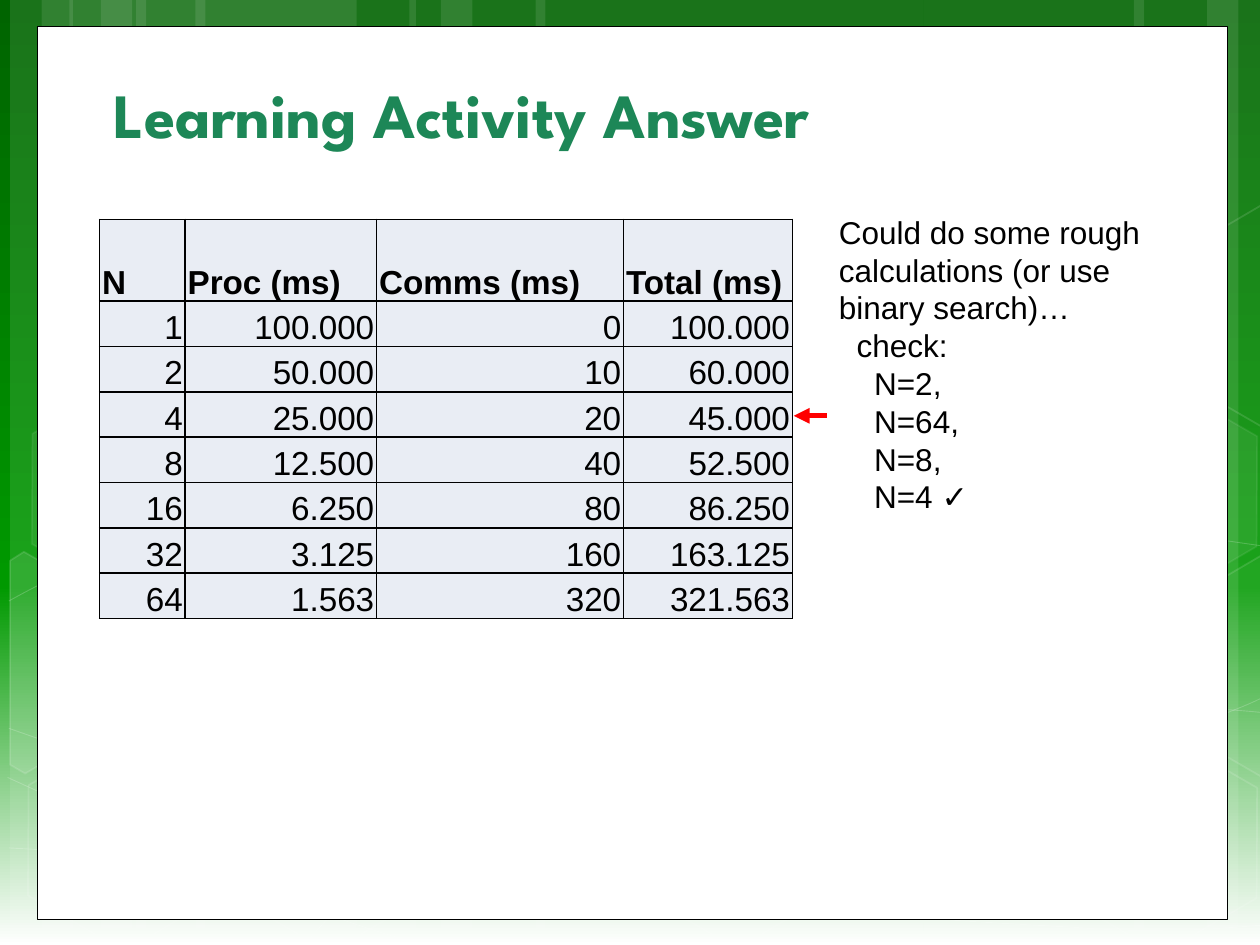
import copy

import lxml.etree
import pptx
import pptx.dml.color
import pptx.enum.shapes
import pptx.enum.text
import pptx.oxml.ns
import pptx.util

Inches = pptx.util.Inches
Pt = pptx.util.Pt
RGBColor = pptx.dml.color.RGBColor
MSO_SHAPE = pptx.enum.shapes.MSO_SHAPE
MSO_ANCHOR = pptx.enum.text.MSO_ANCHOR
PP_ALIGN = pptx.enum.text.PP_ALIGN
qn = pptx.oxml.ns.qn

DARK_GREEN = RGBColor(0x00, 0x64, 0x00)
GREEN = RGBColor(0x00, 0x99, 0x00)
TITLE_GREEN = RGBColor(0x1D, 0x87, 0x57)
WHITE = RGBColor(0xFF, 0xFF, 0xFF)
BLACK = RGBColor(0x00, 0x00, 0x00)
RED = RGBColor(0xFF, 0x00, 0x00)
CELL_FILL = RGBColor(0xE9, 0xED, 0xF4)


def style_translucent(shape, fill_percent, line_percent, line_width=1):
    """Make the shape white at the given opacities; 0 leaves that part out."""
    shape.shadow.inherit = False
    for fill, percent in ((shape.fill, fill_percent), (shape.line.fill, line_percent)):
        if percent:
            fill.solid()
            fill.fore_color.rgb = WHITE
        else:
            fill.background()
    if line_percent:
        shape.line.width = Pt(line_width)
    percents = [p for p in (fill_percent, line_percent) if p]
    colors = shape._element.spPr.iter(qn("a:srgbClr"))
    for color, percent in zip(colors, percents):
        lxml.etree.SubElement(color, qn("a:alpha")).set("val", str(percent * 1000))


def add_outline(points, close):
    """Draw a freeform through points given in inches."""
    corners = [(Inches(x), Inches(y)) for x, y in points]
    builder = slide.shapes.build_freeform(*corners[0])
    builder.add_line_segments(corners[1:], close=close)
    return builder.convert_to_shape()


prs = pptx.Presentation()
prs.slide_width, prs.slide_height = Inches(10), Inches(7.5)
slide = prs.slides.add_slide(prs.slide_layouts[5])

# Background gradient, top to bottom
background = slide.background.fill
background.gradient()
background.gradient_angle = 270
stop_list = background.gradient_stops[0]._gs.getparent()
stop_list.append(copy.deepcopy(stop_list[-1]))
for stop, position, color in zip(background.gradient_stops, (0, 0.62, 1), (DARK_GREEN, GREEN, WHITE)):
    stop.position = position
    stop.color.rgb = color

# Vertical bands: left, width
BANDS = [
    (1.08, 1.75), (0.08, 0.5), (0.33, 0.83), (1.55, 1.75), (0.55, 0.5), (0.8, 0.83),
    (7.33, 1.75), (9.58, 0.5), (9, 0.83), (4.25, 3.08), (3.25, 0.5), (3.5, 0.83),
]
for left, width in BANDS:
    band = slide.shapes.add_shape(MSO_SHAPE.RECTANGLE, Inches(left), 0, Inches(width), Inches(7.5))
    style_translucent(band, 10, 0)

# Thin curves: a start point, then two control points and an end point per bend
CURVES = [
    [(0.07, 6.73), (0.61, 6.76), (1.15, 6.79), (1.9, 6.78), (2.65, 6.77), (3.58, 6.75), (4.58, 6.65),
     (5.58, 6.55), (7, 6.36), (7.92, 6.17), (8.83, 5.98), (9.77, 5.68), (10.07, 5.51)],
    [(0.07, 4.77), (0.36, 4.61), (0.65, 4.46), (1.21, 4.31), (1.78, 4.16), (2.59, 3.94), (3.47, 3.87),
     (4.36, 3.8), (5.44, 3.79), (6.54, 3.87), (7.64, 3.95), (9.47, 4.26), (10.07, 4.34)],
    [(0.06, 6.17), (1.27, 6.72), (2.47, 7.27), (3.34, 7.49)],
    [(0.07, 5.78), (0.38, 5.89), (0.7, 6), (1.28, 6.16), (1.86, 6.31), (2.73, 6.56), (3.57, 6.73),
     (4.4, 6.9), (5.45, 7.08), (6.28, 7.18), (7.11, 7.29), (8, 7.33), (8.53, 7.36),
     (9.05, 7.4), (9.19, 7.38), (9.45, 7.38), (9.71, 7.37), (9.89, 7.35), (10.07, 7.34)],
    [(2.42, 7.49), (2.6, 7.29), (2.78, 7.09), (3.02, 6.91), (3.26, 6.73), (3.6, 6.53), (3.88, 6.39),
     (4.16, 6.25), (4.33, 6.19), (4.7, 6.09), (5.06, 5.99), (5.73, 5.85), (6.08, 5.78),
     (6.44, 5.71), (6.49, 5.71), (6.8, 5.69), (7.11, 5.66), (7.6, 5.63), (7.94, 5.62),
     (8.29, 5.61), (8.86, 5.62), (8.86, 5.62), (9.08, 5.62), (9.31, 5.62), (9.53, 5.62),
     (9.71, 5.63), (9.88, 5.64), (10.06, 5.66)],
]
for knots in CURVES:
    curve = add_outline(knots, close=False)
    # Merge every three straight segments into one cubic bend
    segments = list(curve._element.spPr.iter(qn("a:lnTo")))
    for first, second, third in zip(*[iter(segments)] * 3):
        first.tag = qn("a:cubicBezTo")
        for segment in (second, third):
            first.append(segment[0])
            segment.getparent().remove(segment)
    style_translucent(curve, 0, 20, 0.5)

# Hexagons: left, top, fill opacity, line opacity
HEXAGONS = [
    (4.97, 5.89, 6, 12), (0.11, 5.91, 0, 12), (0.14, 3.12, 7, 8),
    (1.74, 5.92, 0, 12), (8.34, 5.93, 0, 12), (8.34, 3.14, 7, 8),
]
for left, top, fill_percent, line_percent in HEXAGONS:
    hexagon = slide.shapes.add_shape(MSO_SHAPE.HEXAGON, Inches(left), Inches(top), Inches(1.75), Inches(1.52))
    hexagon.adjustments[0] = 0.285
    hexagon.rotation = 30
    style_translucent(hexagon, fill_percent, line_percent)

# Hexagons cut off by the slide edge: points, fill opacity
CUT_HEXAGONS = [
    ([(0.08, 4.45), (0.19, 4.38), (0.96, 4.82), (0.95, 5.7), (0.2, 6.14), (0.08, 6.07)], 10),
    ([(9.26, 4.85), (10.01, 4.41), (10.09, 4.46), (10.09, 6.13), (10.02, 6.17), (9.26, 5.73)], 4),
    ([(9.26, 2.07), (10.01, 1.63), (10.1, 1.68), (10.09, 3.35), (10.02, 3.39), (9.26, 2.95)], 0),
]
for points, fill_percent in CUT_HEXAGONS:
    style_translucent(add_outline(points, close=True), fill_percent, 12)

# White content panel
panel = slide.shapes.add_shape(MSO_SHAPE.RECTANGLE, Inches(0.3), Inches(0.21), Inches(9.44), Inches(7.09))
panel.shadow.inherit = False
panel.fill.solid()
panel.fill.fore_color.rgb = WHITE
panel.line.color.rgb = BLACK
panel.line.width = Pt(0.5)

# Title, brought in front of the panel
title = slide.shapes.title
panel._element.addnext(title._element)
title.left, title.top, title.width, title.height = Inches(0.8), Inches(0.49), Inches(8.42), Inches(0.76)
title.text_frame.text = "Learning Activity Answer"
title.text_frame.vertical_anchor = MSO_ANCHOR.BOTTOM
heading = title.text_frame.paragraphs[0]
heading.alignment = PP_ALIGN.LEFT
heading.font.name = "League Spartan"
heading.font.size = Pt(36)
heading.font.bold = True
heading.font.color.rgb = TITLE_GREEN

# Timing table
TIMINGS = [
    ("N", "Proc (ms)", "Comms (ms)", "Total (ms)"),
    ("1", "100.000", "0", "100.000"),
    ("2", "50.000", "10", "60.000"),
    ("4", "25.000", "20", "45.000"),
    ("8", "12.500", "40", "52.500"),
    ("16", "6.250", "80", "86.250"),
    ("32", "3.125", "160", "163.125"),
    ("64", "1.563", "320", "321.563"),
]
timings = slide.shapes.add_table(8, 4, Inches(0.79), Inches(1.74), Inches(5.5), Inches(3.17)).table
timings.first_row = timings.horz_banding = False
for column, width in zip(timings.columns, (0.68, 1.52, 1.96, 1.34)):
    column.width = Inches(width)
for r, values in enumerate(TIMINGS):
    timings.rows[r].height = Inches(0.36 if r else 0.65)
    for c, value in enumerate(values):
        cell = timings.cell(r, c)
        cell.text = value
        cell.vertical_anchor = MSO_ANCHOR.BOTTOM
        cell.margin_left = cell.margin_right = cell.margin_top = Inches(0.02)
        cell.margin_bottom = 0
        entry = cell.text_frame.paragraphs[0]
        entry.alignment = PP_ALIGN.RIGHT if r else PP_ALIGN.LEFT
        entry.font.name = "Arial"
        entry.font.size = Pt(19)
        entry.font.bold = r == 0
        entry.font.color.rgb = BLACK
        properties = cell._tc.get_or_add_tcPr()
        for side in ("a:lnL", "a:lnR", "a:lnT", "a:lnB"):
            border = lxml.etree.SubElement(properties, qn(side), w=str(Pt(1)))
            border_fill = lxml.etree.SubElement(border, qn("a:solidFill"))
            lxml.etree.SubElement(border_fill, qn("a:srgbClr"), val=str(BLACK))
        cell.fill.solid()
        cell.fill.fore_color.rgb = CELL_FILL

# Search steps beside the table: text, indent level
SEARCH_STEPS = [
    ("Could do some rough calculations (or use binary search)…", 0),
    ("check:", 1), ("N=2,", 2), ("N=64,", 2), ("N=8,", 2), ("N=4 ✓", 2),
]
search = slide.shapes.add_textbox(Inches(6.56), Inches(1.64), Inches(2.66), Inches(2.52)).text_frame
search.word_wrap = True
search.text = "\n".join(text for text, level in SEARCH_STEPS)
for paragraph, (text, level) in zip(search.paragraphs, SEARCH_STEPS):
    paragraph.font.name = "Arial"
    paragraph.font.size = Pt(18)
    paragraph.font.color.rgb = BLACK
    paragraph._p.get_or_add_pPr().set("marL", str(Inches(0.14 * level)))

# Arrow to the lowest total
arrow = slide.shapes.add_connector(
    pptx.enum.shapes.MSO_CONNECTOR.STRAIGHT, Inches(6.56), Inches(3.3), Inches(6.3), Inches(3.3))
arrow.line.color.rgb = RED
arrow.line.width = Pt(3)
lxml.etree.SubElement(arrow.line._get_or_add_ln(), qn("a:tailEnd"), type="triangle")
lxml.etree.SubElement(arrow._element.spPr, qn("a:effectLst"))

prs.save("out.pptx")
